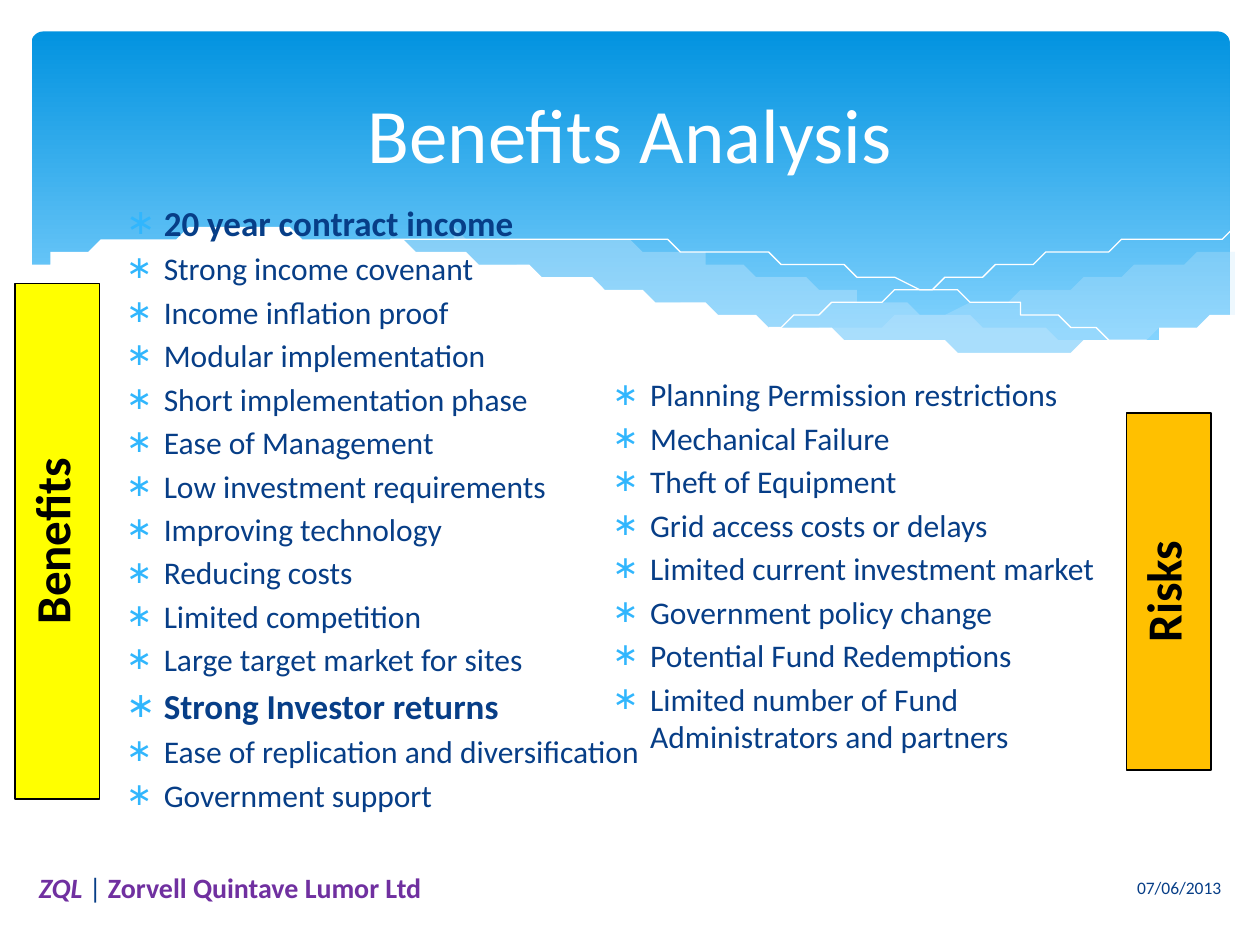
from lxml.etree import SubElement
from pptx import Presentation
from pptx.dml.color import RGBColor
from pptx.enum.shapes import MSO_SHAPE as Kind
from pptx.enum.text import MSO_ANCHOR as Anchor, MSO_AUTO_SIZE as Fit, PP_ALIGN as Align
from pptx.oxml.ns import qn
from pptx.util import Inches, Pt

CELL = Inches(0.1)  # the slide is a grid of 100 columns by 75 rows

BENEFITS = [
    "20 year contract income", "Strong income covenant", "Income inflation proof",
    "Modular implementation", "Short implementation phase", "Ease of Management",
    "Low investment requirements", "Improving technology", "Reducing costs",
    "Limited competition", "Large target market for sites", "Strong Investor returns",
    "Ease of replication and diversification", "Government support",
]
STRONG = {"20 year contract income", "Strong Investor returns"}
RISKS = [
    "Planning Permission restrictions", "Mechanical Failure", "Theft of Equipment",
    "Grid access costs or delays", "Limited current investment market",
    "Government policy change", "Potential Fund Redemptions",
    "Limited number of Fund Administrators and partners",
]

# Each wave is a chain of runs; a run is smooth inside and may meet the next at a corner.
RIGHT = [
    [(97.6, 20), (93.5, 20.7), (86.1, 22.3), (77.9, 24.2), (66.1, 26.5)],
    [(66.1, 26.5), (73.2, 27.4), (80.3, 27.8), (86.3, 27.5), (91.3, 26.7), (97.6, 24.7)],
]
LEFT = [
    [(89.3, 27.3), (80.7, 26), (70.6, 24), (62.9, 22.2), (55.5, 20.5), (48.9, 19.3),
     (42, 18.7), (36.1, 18.5), (32.8, 18.7), (28.6, 19.1)],
    [(28.6, 19.1), (36.2, 20.3), (44.9, 22.2), (56.6, 24.8), (66.5, 26.6), (74.8, 27.6),
     (81.8, 27.8), (89.3, 27.3)],
]
FALL = [[(30.9, 19.5), (34.4, 19), (40.1, 18.7), (46.9, 18.9), (55.6, 19.7),
         (66.5, 21.3), (76, 23.3), (83.1, 25.1), (90.7, 27.2)]]
RISE = [[(61.3, 25.7), (69.5, 23.5), (77.6, 21.6), (86.6, 19.9), (92.4, 19), (97.5, 18.5)]]
FLOOR = [
    [(97.7, 24.6), (94, 25.9), (88.7, 27.1), (82.3, 27.7), (76.1, 27.5), (68.8, 26.8),
     (60.3, 25.4), (52.9, 23.9), (44.7, 22), (36.5, 20.2), (29.2, 19), (23, 18.5),
     (17.7, 18.4), (13.2, 18.6), (9.5, 19.1), (6.7, 19.7), (4.6, 20.3), (2.3, 21.3)],
    [(2.3, 32.9), (97.7, 32.9)],
]


def paint(color, code):
    color.rgb = RGBColor.from_string(code)


def smooth(run, steps=8):
    """Sample a Catmull-Rom curve through the points of a run."""
    pts = [run[0], *run, run[-1]]
    out = [run[0]]
    for a, b, c, d in zip(pts, pts[1:], pts[2:], pts[3:]):
        for t in (i / steps for i in range(1, steps + 1)):
            out.append(tuple(
                q + t / 2 * (r - p + t * (2 * p - 5 * q + 4 * r - s + t * (3 * (q - r) + s - p)))
                for p, q, r, s in zip(a, b, c, d)))
    return out


class Deck:
    font = "Calibri"
    navy, sky, purple, white, black = "073E87", "31B6FD", "7030A0", "FFFFFF", "000000"

    def __init__(self):
        self.prs = Presentation()
        self.prs.slide_width, self.prs.slide_height = 100 * CELL, 75 * CELL
        self.slide = self.prs.slides.add_slide(self.prs.slide_layouts[3])
        self.shapes = self.slide.shapes

    def place(self, shape, box):
        shape.left, shape.top, shape.width, shape.height = (round(n * CELL) for n in box)

    def style(self, font, size, code, bold=False, italic=False):
        font.name, font.size, font.bold, font.italic = self.font, Pt(size), bold, italic
        paint(font.color, code)

    def block(self, kind, box):
        shape = self.shapes.add_shape(kind, *(round(n * CELL) for n in box))
        shape.shadow.inherit = False
        return shape

    def banner(self, box, top, low):
        shape = self.block(Kind.ROUNDED_RECTANGLE, box)
        shape.adjustments[0] = 0.034
        shape.line.fill.background()
        shape.fill.gradient()
        shape.fill.gradient_angle = 270
        for stop, pos, code in zip(shape.fill.gradient_stops, (0, 0.9), (top, low)):
            stop.position = pos
            paint(stop.color, code)

    def wave(self, runs, code=None, alpha=100):
        """Draw a filled wave, or a white hairline when no colour is given."""
        first, *rest = [p for run in runs for p in smooth(run)]
        path = self.shapes.build_freeform(*first, scale=CELL)
        path.add_line_segments(rest, close=code is not None)
        shape = path.convert_to_shape()
        shape.shadow.inherit = False
        if code is None:
            shape.fill.background()
            paint(shape.line.color, self.white)
            shape.line.width = Pt(0)
            return
        shape.line.fill.background()
        shape.fill.solid()
        paint(shape.fill.fore_color, code)
        if alpha < 100:
            tint = shape.fill._xPr.find(".//" + qn("a:srgbClr"))
            SubElement(tint, qn("a:alpha"), val=str(alpha * 1000))

    def holder(self, index, box):
        """Move a placeholder into its box and in front of the waves."""
        shape = self.slide.placeholders[index]
        self.place(shape, box)
        self.shapes._spTree.append(shape._element)
        shape.text_frame.auto_size = Fit.NONE
        return shape.text_frame

    def title(self, text, box):
        frame = self.holder(0, box)
        frame.text, frame.vertical_anchor = text, Anchor.MIDDLE
        frame.paragraphs[0].alignment = Align.CENTER
        self.style(frame.paragraphs[0].font, 44, self.white)

    def bullets(self, index, items, box):
        frame = self.holder(index, box)
        frame.text = "\n".join(items)
        for i, (para, item) in enumerate(zip(frame.paragraphs, items)):
            bold = item in STRONG
            size = 20 if bold else 18
            self.style(para.font, size, self.navy, bold)
            para.space_before = Pt(0.18 * size if i else 0)
            props = para._p.get_or_add_pPr()
            props.set("marL", str(3 * CELL))
            props.set("indent", str(-3 * CELL))
            hue = SubElement(props, qn("a:buClr"))
            SubElement(hue, qn("a:srgbClr"), val=self.sky)
            SubElement(props, qn("a:buFont"), typeface=self.font)
            SubElement(props, qn("a:buChar"), char="∗")
            props.append(props.find(qn("a:defRPr")))

    def label(self, runs, box, size, align=Align.LEFT):
        """Add one line of text from (text, colour, bold, italic) runs."""
        frame = self.shapes.add_textbox(*(round(n * CELL) for n in box)).text_frame
        frame.word_wrap, frame.vertical_anchor = True, Anchor.MIDDLE
        para = frame.paragraphs[0]
        para.alignment = align
        for text, *look in runs:
            run = para.add_run()
            run.text = text
            self.style(run.font, size, *look)

    def tab(self, text, box, code):
        shape = self.block(Kind.RECTANGLE, box)
        shape.fill.solid()
        paint(shape.fill.fore_color, code)
        paint(shape.line.color, self.black)
        shape.line.width = Pt(1)
        frame = shape.text_frame
        frame.text = text
        frame.vertical_anchor = Anchor.TOP
        frame._txBody.bodyPr.set("vert", "vert270")
        frame.paragraphs[0].alignment = Align.CENTER
        self.style(frame.paragraphs[0].font, 28, self.black, True)


def main():
    deck = Deck()
    deck.banner((2.5, 2.5, 95.1, 27), "0293E0", "83D3FE")
    deck.wave(RIGHT, "C6E7FC", 29)
    deck.wave(LEFT, "C6E7FC", 40)
    deck.wave(FALL)
    deck.wave(RISE)
    deck.wave(FLOOR, deck.white)
    deck.title("Benefits Analysis", (5, 3.7, 90, 13.7))
    deck.bullets(1, BENEFITS, (9, 15.5, 43.4, 46.8))
    deck.bullets(2, RISKS, (47.6, 29.3, 41.8, 37.7))
    deck.label([("07/06/2013", deck.navy)], (56.5, 68.4, 41.4, 4), 10, Align.RIGHT)
    deck.label([("ZQL ", deck.purple, True, True), ("|\u00a0", deck.navy),
                ("Zorvell Quintave Lumor Ltd", deck.purple, True)], (2.1, 68.4, 41.4, 4), 16)
    deck.tab("Benefits", (1.2, 22.5, 6.7, 40.9), "FFFF00")
    deck.tab("Risks", (89.4, 32.8, 6.7, 28.3), "FFC000")
    deck.prs.save("out.pptx")


if __name__ == "__main__":
    main()
